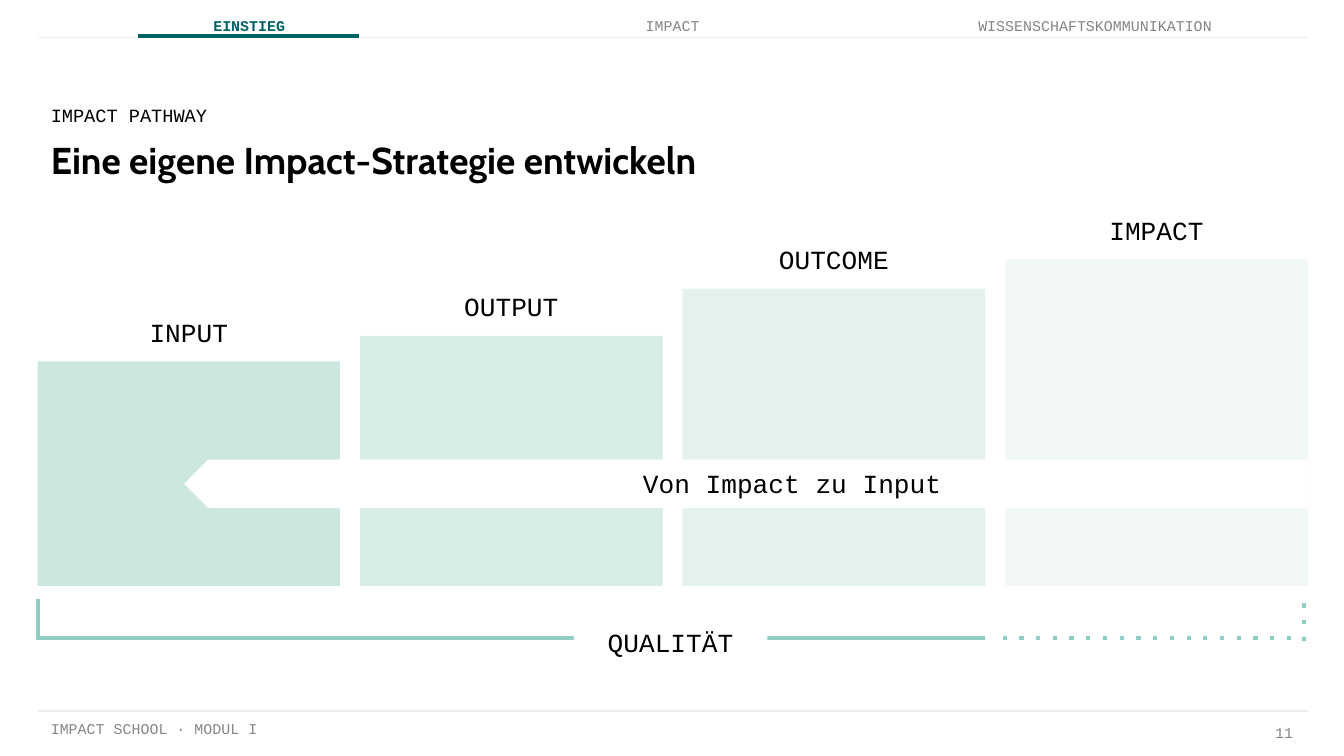
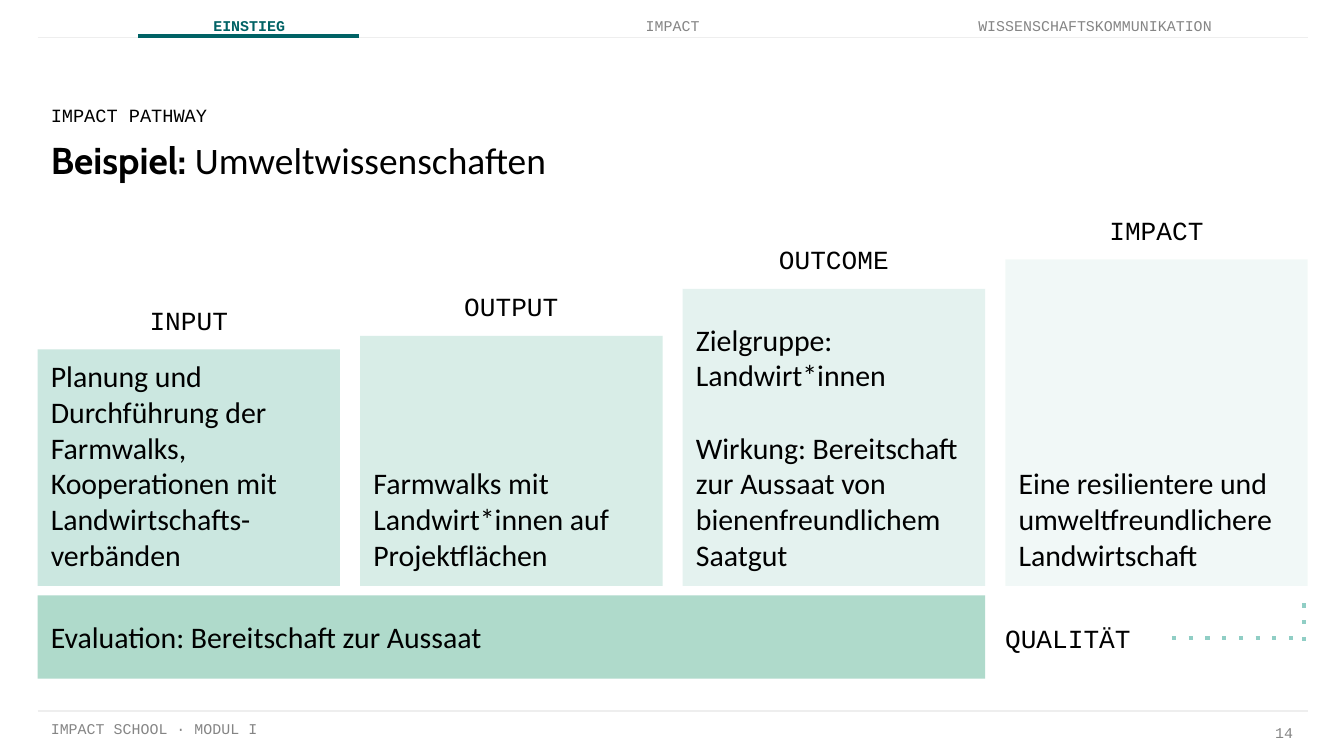
from copy import deepcopy
from dataclasses import dataclass

from lxml.etree import SubElement
from pptx import Presentation
from pptx.dml.color import RGBColor
from pptx.enum.shapes import MSO_CONNECTOR, MSO_SHAPE
from pptx.enum.text import MSO_ANCHOR as Anchor, PP_ALIGN as Align
from pptx.oxml.ns import qn
from pptx.util import Inches, Pt

COLORS = {
    "black": "000000", "white": "FFFFFF", "grey": "858585", "rule": "EEEEEE",
    "petrol": "006265", "step": "CBE7E0", "evaluation": "AFDACB", "bracket": "90CEC5",
}

# Text styles: font attributes and colour name
MONO, HEAD, BODY = "Courier New", "Cabin", "Calibri"
STYLES = {
    "small": ({"name": MONO, "size": Pt(8), "bold": False}, "grey"),
    "active": ({"name": MONO, "size": Pt(8), "bold": True}, "petrol"),
    "kicker": ({"name": MONO, "size": Pt(10), "bold": False}, "black"),
    "label": ({"name": MONO, "size": Pt(14), "bold": False}, "black"),
    "title": ({"name": HEAD, "size": Pt(20), "bold": True}, "black"),
    "subject": ({"name": BODY, "size": Pt(20), "bold": False}, "black"),
    "body": ({"name": BODY, "size": Pt(16), "bold": False}, "black"),
}

# Slide grid: 100 columns by 56.25 rows
SLIDE_WIDTH, SLIDE_HEIGHT = Inches(10), Inches(5.625)
COLUMN, ROW = SLIDE_WIDTH / 100, SLIDE_HEIGHT / 56.25

STEP_WIDTH, STEP_PITCH = 22.5, 24
STEP_NAMES = ["INPUT", "OUTPUT", "OUTCOME", "IMPACT"]
STEP_OPACITY = [100, 75, 50, 25]
LABEL_WIDTH, LABEL_HEIGHT, LABEL_RISE = 16.5, 2.8, 3.6
TABS = [("EINSTIEG", 7, 17.5), ("IMPACT", 30.2, 34.1),
        ("WISSENSCHAFTSKOMMUNIKATION", 64.4, 28.6)]


@dataclass
class Box:
    """An area in columns and rows of the slide grid."""
    left: float
    top: float
    width: float
    height: float

    def inner(self, left, top, width, height):
        return Box(self.left + left, self.top + top, width, height)

    def emu(self):
        return (round(self.left * COLUMN), round(self.top * ROW),
                round(self.width * COLUMN), round(self.height * ROW))


HEADER = Box(2.8, 0.2, 94.5, 3.4)
TITLE = Box(2.8, 7.6, 77.7, 6.8)
PATHWAY = Box(2.8, 15.6, 94.5, 28)
QUALITY = Box(2.8, 44.3, 94.5, 6.2)
FOOTER = Box(2.8, 52.9, 94.5, 3.4)


def rgb(name):
    return RGBColor.from_string(COLORS[name])


# Basic elements
def write(shape, paragraphs, style, align=Align.LEFT, anchor=Anchor.MIDDLE,
          gap=0, spacing=None):
    """Each paragraph is a string or a list of (text, style) runs."""
    frame = shape.text_frame
    frame_format = {"word_wrap": True, "vertical_anchor": anchor}
    frame_format.update({f"margin_{side}": Inches(0.1)
                         for side in ("left", "top", "right", "bottom")})
    for name, value in frame_format.items():
        setattr(frame, name, value)
    for index, content in enumerate(paragraphs):
        paragraph = frame.add_paragraph() if index else frame.paragraphs[0]
        paragraph.alignment = align
        paragraph.line_spacing = spacing
        if index:
            paragraph.space_before = Pt(gap)
        runs = [(content, style)] if isinstance(content, str) else content
        for text, run_style in runs:
            add_lines(paragraph, text, run_style)


def add_lines(paragraph, text, style):
    font_format, color = STYLES[style]
    for index, line in enumerate(text.split("\n")):
        if index:
            paragraph.add_line_break()
        run = paragraph.add_run()
        run.text = line
        for name, value in font_format.items():
            setattr(run.font, name, value)
        run.font.color.rgb = rgb(color)
    for line_break in paragraph._p.findall(qn("a:br")):
        if len(line_break) == 0:
            line_break.append(deepcopy(run._r.rPr))


def add_text(slide, box, text, style, **layout):
    write(slide.shapes.add_textbox(*box.emu()), [text], style, **layout)


def add_block(slide, box, color, opacity=100, kind=MSO_SHAPE.RECTANGLE):
    shape = slide.shapes.add_shape(kind, *box.emu())
    shape.shadow.inherit = False
    shape.fill.solid()
    shape.fill.fore_color.rgb = rgb(color)
    shape.line.fill.background()
    if opacity < 100:
        fill_color = shape._element.spPr.find(qn("a:solidFill"))[0]
        SubElement(fill_color, qn("a:alpha"), val=str(opacity * 1000))
    return shape


def add_line(slide, box, color, weight, dotted=False):
    left, top, width, height = box.emu()
    connector = slide.shapes.add_connector(
        MSO_CONNECTOR.STRAIGHT, left, top, left + width, top + height)
    connector.line.color.rgb = rgb(color)
    connector.line.width = Pt(weight)
    if dotted:
        SubElement(connector.get_or_add_ln(), qn("a:prstDash"), val="dot")
    SubElement(connector._element.spPr, qn("a:effectLst"))


# Regions shared by both slides
def draw_footer(slide, box, number):
    add_text(slide, box.inner(0, 0, 63, box.height), "IMPACT SCHOOL · MODUL I",
             "small", anchor=Anchor.TOP)
    add_text(slide, box.inner(90.1, 0, 4.3, box.height), number, "small",
             align=Align.RIGHT, spacing=0.8)
    add_line(slide, box.inner(0, 0, box.width, 0), "rule", 0.75)


def draw_header(slide, box):
    add_line(slide, box.inner(0, 2.6, box.width, 0), "rule", 0.75)
    for index, (name, left, width) in enumerate(TABS):
        add_text(slide, box.inner(left, 0, width, box.height), name,
                 "small" if index else "active", align=Align.CENTER)
    _, left, width = TABS[0]
    add_line(slide, box.inner(left + 0.5, 2.5, width - 1.1, 0), "petrol", 2.25)


def draw_title(slide, box, title):
    add_text(slide, box.inner(0, 1.6, box.width, 5.2), title, "title", anchor=Anchor.TOP)
    add_text(slide, box.inner(0, 0, box.width, 2), "IMPACT PATHWAY", "kicker")


def draw_steps(slide, box, heights, contents):
    steps = zip(STEP_NAMES, STEP_OPACITY, heights, contents)
    for index, (name, opacity, height, paragraphs) in enumerate(steps):
        left, top = index * STEP_PITCH, box.height - height
        step = add_block(slide, box.inner(left, top, STEP_WIDTH, height), "step", opacity)
        if paragraphs:
            write(step, paragraphs, "body", anchor=Anchor.BOTTOM, gap=19.5)
        label_left = left + (STEP_WIDTH - LABEL_WIDTH) / 2
        add_text(slide, box.inner(label_left, top - LABEL_RISE, LABEL_WIDTH, LABEL_HEIGHT),
                 name, "label", align=Align.CENTER)


def draw_dotted_corner(slide, box, start):
    add_line(slide, box.inner(start, 3.2, 93.7 - start, 0), "bracket", 2.25, dotted=True)
    add_line(slide, box.inner(94.2, 0.6, 0, 2.9), "bracket", 2.25, dotted=True)


def draw_quality_label(slide, box, align):
    write(add_block(slide, box, "white"), ["QUALITÄT"], "label", align, Anchor.TOP)


# Regions of the strategy slide
def draw_reverse_arrow(slide, box):
    arrow = add_block(slide, box.inner(10.9, 18.6, 83.6, 3.6), "white",
                      kind=MSO_SHAPE.PENTAGON)
    arrow.rotation = 180
    arrow.adjustments[0] = 0.5
    add_text(slide, box.inner(27.2, 19, 57.9, 2.7), "Von Impact zu Input", "label",
             align=Align.CENTER)


def draw_quality_bracket(slide, box):
    add_line(slide, box.inner(-0.1, 3.2, 70.6, 0), "bracket", 2.25)
    add_line(slide, box.inner(0, 0.3, 0, 3), "bracket", 2.25)
    draw_dotted_corner(slide, box, 71.8)
    draw_quality_label(slide, box.inner(39.9, 1.3, 14.4, 3.7), Align.CENTER)


# Region of the example slide
def draw_evaluation(slide, box):
    draw_dotted_corner(slide, box, 84.4)
    draw_quality_label(slide, box.inner(71, 1, 12.2, 3.7), Align.LEFT)
    width = 2 * STEP_PITCH + STEP_WIDTH
    bar = add_block(slide, box.inner(0, 0, width, box.height), "evaluation")
    write(bar, ["Evaluation: Bereitschaft zur Aussaat"], "body")


# Slides
def add_pathway_slide(presentation, number, title, input_height, contents):
    slide = presentation.slides.add_slide(presentation.slide_layouts[6])
    draw_footer(slide, FOOTER, number)
    draw_header(slide, HEADER)
    draw_title(slide, TITLE, title)
    draw_steps(slide, PATHWAY, [input_height, 18.6, 22.1, 24.3], contents)
    return slide


def add_strategy_slide(presentation):
    slide = add_pathway_slide(presentation, "11", "Eine eigene Impact-Strategie entwickeln",
                              16.7, [[]] * 4)
    draw_reverse_arrow(slide, PATHWAY)
    draw_quality_bracket(slide, QUALITY)


def add_example_slide(presentation):
    title = [("Beispiel: ", "title"), ("Umweltwissenschaften", "subject")]
    contents = [
        ["Planung und Durchführung der Farmwalks, Kooperationen mit "
         "Landwirtschafts-\nverbänden"],
        ["Farmwalks mit Landwirt*innen auf Projektflächen"],
        ["Zielgruppe: Landwirt*innen",
         "Wirkung: Bereitschaft zur Aussaat von bienenfreundlichem Saatgut"],
        ["Eine resilientere und umweltfreundlichere Landwirtschaft"],
    ]
    slide = add_pathway_slide(presentation, "14", title, 17.6, contents)
    draw_evaluation(slide, QUALITY)


def main():
    presentation = Presentation()
    presentation.slide_width, presentation.slide_height = SLIDE_WIDTH, SLIDE_HEIGHT
    add_strategy_slide(presentation)
    add_example_slide(presentation)
    presentation.save("out.pptx")


if __name__ == "__main__":
    main()
